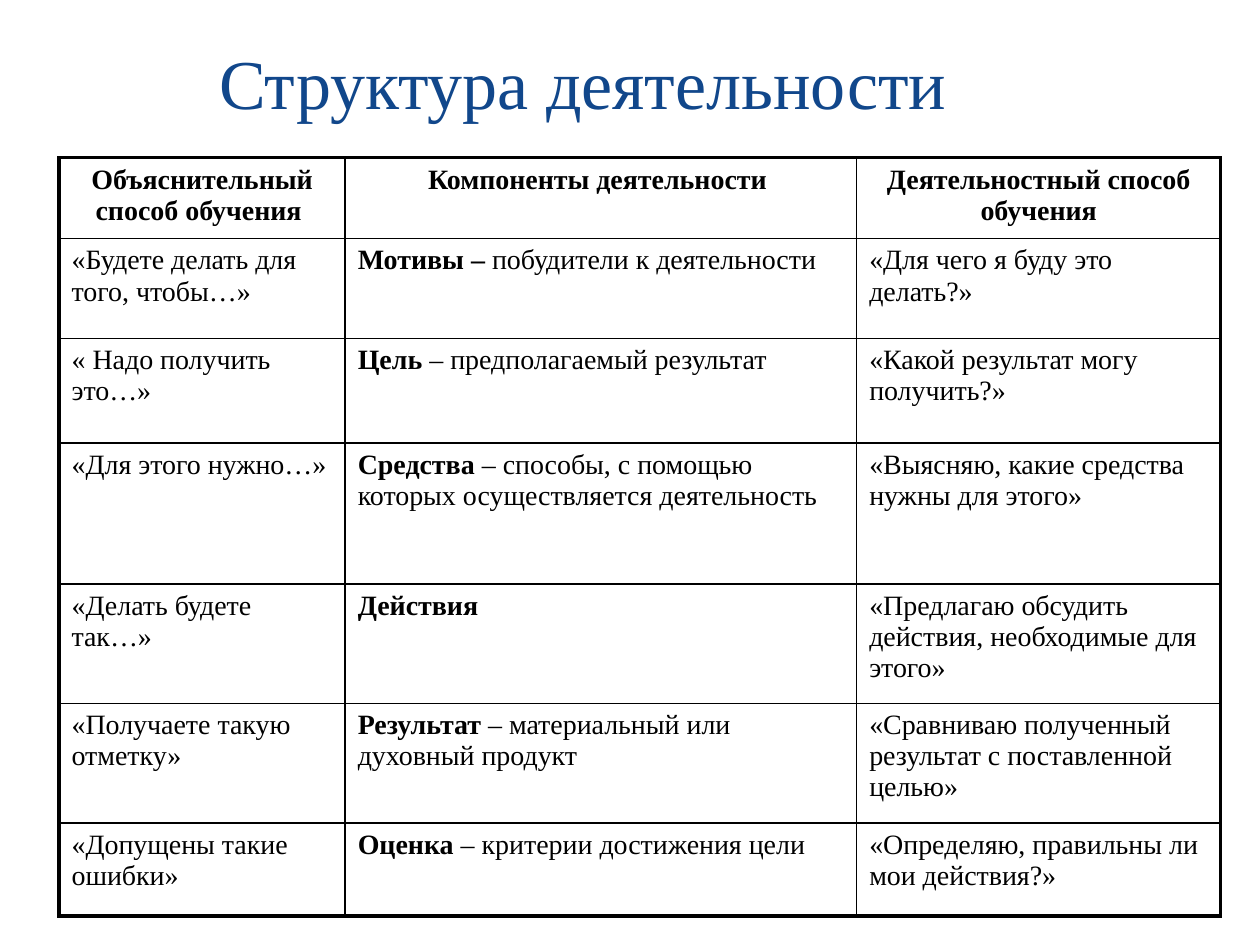
from lxml import etree
from pptx import Presentation
from pptx.dml.color import RGBColor
from pptx.enum.text import MSO_ANCHOR, PP_ALIGN
from pptx.oxml.ns import qn
from pptx.util import Cm, Pt

CENTER, LEFT = PP_ALIGN.CENTER, PP_ALIGN.LEFT
MIDDLE = MSO_ANCHOR.MIDDLE
TITLE_ONLY = 5
THIN, THICK = 1, 2.25

COLUMN_WIDTHS = [5.77, 10.31, 7.34]
ROW_HEIGHTS = [1.63, 2.01, 2.11, 2.84, 2.41, 2.41, 1.88]
HEADINGS = ["Объяснительный способ обучения ", "Компоненты деятельности ",
            "Деятельностный способ обучения"]
# explanatory way, component name, component meaning, activity way
COMPONENTS = [
    ("«Будете делать для того, чтобы…»", "Мотивы – ",
     "побудители к деятельности", "«Для чего я буду это делать?»"),
    ("« Надо получить это…»", "Цель",
     " – предполагаемый результат", "«Какой результат могу получить?»"),
    ("«Для этого нужно…»", "Средства ",
     "– способы, с помощью которых осуществляется деятельность",
     "«Выясняю, какие средства нужны для этого»"),
    ("«Делать будете так…»", "Действия",
     "", "«Предлагаю обсудить действия, необходимые для этого»"),
    ("«Получаете такую отметку»", "Результат",
     " – материальный или духовный продукт",
     "«Сравниваю полученный результат с поставленной целью»"),
    ("«Допущены такие ошибки»", "Оценка",
     " – критерии достижения цели", "«Определяю, правильны ли мои действия?»"),
]


def color(hex_string):
    return RGBColor.from_string(hex_string)


class SlideBuilder:
    """Holds the slide and its style."""
    font = "Times New Roman"
    ink = "000000"
    title_ink = "11478B"

    def __init__(self, slide):
        self.slide = slide

    def add_spans(self, para, spans, size, ink, align):
        """Add (text, bold) spans to a paragraph."""
        para.alignment = align
        for text, bold in spans:
            span = para.add_run()
            span.text = text
            span.font.name = self.font
            span.font.size = Pt(size)
            span.font.bold = bold
            span.font.color.rgb = color(ink)

    def title(self, text, left, top, width, height):
        box = self.slide.shapes.title
        box.left, box.top, box.width, box.height = map(Cm, (left, top, width, height))
        box.text_frame.vertical_anchor = MIDDLE
        self.add_spans(box.text_frame.paragraphs[0], [(text, False)], 40,
                       self.title_ink, CENTER)

    def borders(self, cell, widths):
        """Draw the cell's borders; widths maps each side to points."""
        properties = cell._tc.get_or_add_tcPr()
        for position, side in enumerate("LRTB"):
            line = etree.Element(qn(f"a:ln{side}"), w=str(int(Pt(widths[side]))))
            fill = etree.SubElement(line, qn("a:solidFill"))
            etree.SubElement(fill, qn("a:srgbClr"), val=self.ink)
            properties.insert(position, line)

    def table(self, rows, left, top, widths, heights):
        """Build a table from rows of span lists, with a thick outer frame."""
        frame = self.slide.shapes.add_table(
            len(heights), len(widths), Cm(left), Cm(top),
            Cm(sum(widths)), Cm(sum(heights)))
        table = frame.table
        table.first_row = table.horz_banding = False
        for column, width in zip(table.columns, widths):
            column.width = Cm(width)
        last_row, last_column = len(heights) - 1, len(widths) - 1
        for r, row in enumerate(rows):
            table.rows[r].height = Cm(heights[r])
            for c, spans in enumerate(row):
                cell = table.cell(r, c)
                cell.fill.background()
                self.add_spans(cell.text_frame.paragraphs[0], spans, 16, self.ink,
                               CENTER if r == 0 else LEFT)
                outer = {"L": c == 0, "R": c == last_column,
                         "T": r == 0, "B": r == last_row}
                self.borders(cell, {side: THICK if edge else THIN
                                    for side, edge in outer.items()})


def main():
    deck = Presentation()
    deck.slide_width, deck.slide_height = Cm(25.4), Cm(19.05)
    page = SlideBuilder(deck.slides.add_slide(deck.slide_layouts[TITLE_ONLY]))
    page.title("Структура деятельности", 1.27, 0.33, 20.96, 2.64)

    rows = [[[(heading, True)] for heading in HEADINGS]]
    for explained, name, meaning, active in COMPONENTS:
        component = [(name, True)]
        if meaning:
            component.append((meaning, False))
        rows.append([[(explained, False)], component, [(active, False)]])
    page.table(rows, 1.19, 3.18, COLUMN_WIDTHS, ROW_HEIGHTS)
    deck.save("out.pptx")


if __name__ == "__main__":
    main()
